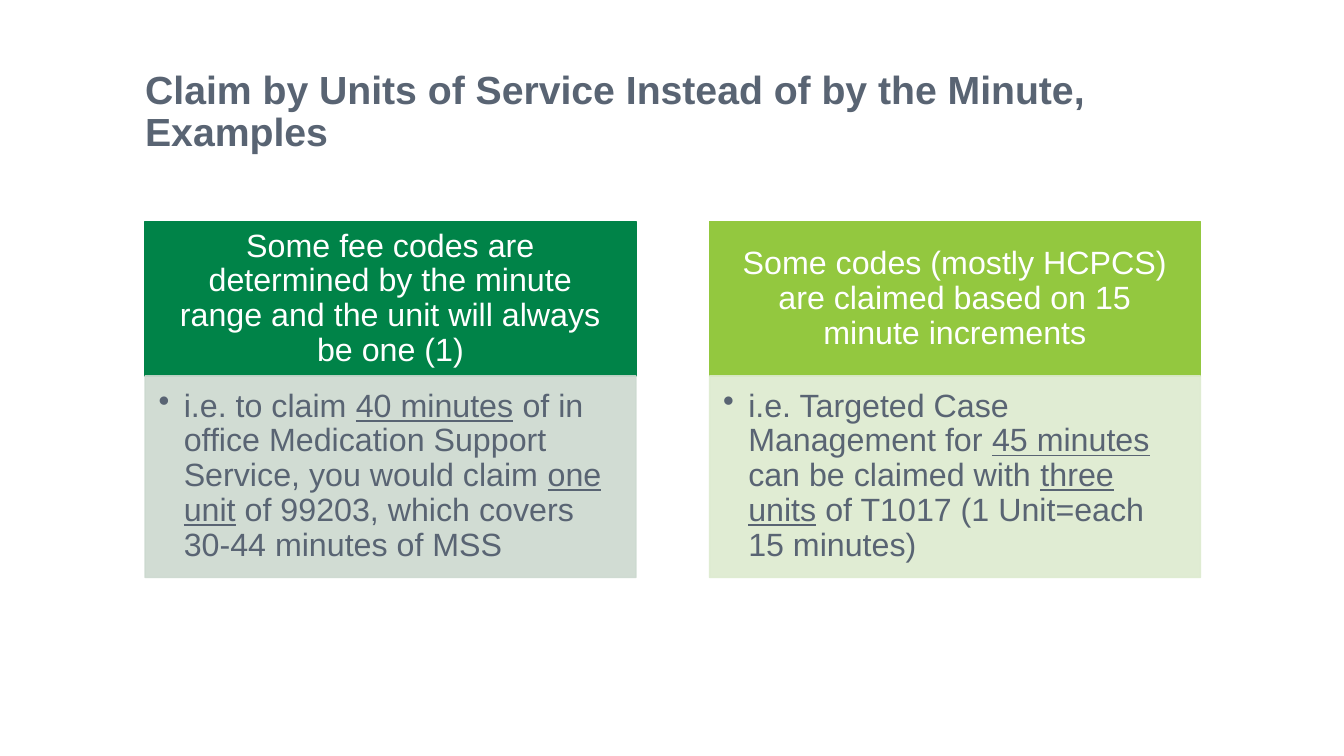
from dataclasses import dataclass

import pptx
import pptx.dml.color
import pptx.enum.shapes
import pptx.enum.text
import pptx.oxml
import pptx.oxml.ns
import pptx.slide
import pptx.text.text
import pptx.util

Pt = pptx.util.Pt
ALIGN = pptx.enum.text.PP_ALIGN
ANCHOR = pptx.enum.text.MSO_ANCHOR

SLATE = "596473"
WHITE = "FFFFFF"
LEFT_MARGIN = 103.68
COLUMN_PITCH = 403.2
COLUMN_WIDTH = 350.64
HEADER_TOP, HEADER_HEIGHT = 158.4, 110.16
BODY_TOP, BODY_HEIGHT = HEADER_TOP + HEADER_HEIGHT, 144


@dataclass(frozen=True)
class TextRun:
    text: str
    underline: bool = False


@dataclass(frozen=True)
class Column:
    header: str
    example: tuple[TextRun, ...]
    header_color: str
    body_color: str


COLUMNS = (
    Column(
        "Some fee codes are determined by the minute range and the unit will always be one (1)",
        (
            TextRun("i.e. to claim "),
            TextRun("40 minutes", True),
            TextRun(" of in office Medication Support Service, you would claim "),
            TextRun("one unit", True),
            TextRun(" of 99203, which covers 30-44 minutes of MSS"),
        ),
        "008348",
        "CCD9CF",
    ),
    Column(
        "Some codes (mostly HCPCS) are claimed based on 15 minute increments",
        (
            TextRun("i.e. Targeted Case Management for "),
            TextRun("45 minutes", True),
            TextRun(" can be claimed with "),
            TextRun("three units", True),
            TextRun(" of T1017 (1 Unit=each 15 minutes)"),
        ),
        "93C83F",
        "DDEBCF",
    ),
)


def rgb(color: str) -> pptx.dml.color.RGBColor:
    return pptx.dml.color.RGBColor.from_string(color)


def add_bullet(paragraph: pptx.text.text._Paragraph, indent: float) -> None:
    properties = paragraph._p.get_or_add_pPr()
    properties.set("marL", str(Pt(indent)))
    properties.set("indent", str(-Pt(indent)))
    bullet = pptx.oxml.ns.qn("a:buChar")
    properties.append(properties.makeelement(bullet, {"char": "•"}))


def write_text(
    text_frame: pptx.text.text.TextFrame,
    text_runs: tuple[TextRun, ...],
    *,
    size: float,
    color: str,
    insets: tuple[float, float, float, float],
    anchor: ANCHOR,
    alignment: ALIGN = ALIGN.LEFT,
    bold: bool = False,
    bullet_indent: float = 0,
) -> None:
    text_frame.word_wrap = True
    text_frame.auto_size = pptx.enum.text.MSO_AUTO_SIZE.NONE
    text_frame.vertical_anchor = anchor
    text_frame.margin_left, text_frame.margin_top, text_frame.margin_right, text_frame.margin_bottom = map(Pt, insets)
    paragraph = text_frame.paragraphs[0]
    if bullet_indent:
        add_bullet(paragraph, bullet_indent)
    paragraph.alignment = alignment
    paragraph.line_spacing = 0.9
    paragraph.space_before = Pt(0)
    for text_run in text_runs:
        run = paragraph.add_run()
        run.text = text_run.text
        run.font.name = "Arial"
        run.font.size = Pt(size)
        run.font.bold = bold
        run.font.underline = text_run.underline
        run.font.color.rgb = rgb(color)


def add_panel(
    slide: pptx.slide.Slide, left: float, top: float, height: float, color: str, opacity: int = 100
) -> pptx.text.text.TextFrame:
    shape = slide.shapes.add_shape(
        pptx.enum.shapes.MSO_SHAPE.RECTANGLE, Pt(left), Pt(top), Pt(COLUMN_WIDTH), Pt(height)
    )
    shape.shadow.inherit = False
    shape.fill.solid()
    shape.fill.fore_color.rgb = rgb(color)
    shape.line.color.rgb = rgb(color)
    shape.line.width = Pt(1)
    if opacity < 100:
        for element in shape._element.spPr.iter(pptx.oxml.ns.qn("a:srgbClr")):
            alpha = pptx.oxml.ns.qn("a:alpha")
            element.append(element.makeelement(alpha, {"val": str(opacity * 1000)}))
    return shape.text_frame


def add_column(slide: pptx.slide.Slide, column: Column, left: float) -> None:
    header = add_panel(slide, left, HEADER_TOP, HEADER_HEIGHT, column.header_color)
    write_text(
        header,
        (TextRun(column.header),),
        size=23,
        color=WHITE,
        insets=(12.9, 7.2, 12.9, 7.2),
        anchor=ANCHOR.MIDDLE,
        alignment=ALIGN.CENTER,
    )
    body = add_panel(slide, left, BODY_TOP, BODY_HEIGHT, column.body_color, opacity=90)
    write_text(
        body,
        column.example,
        size=23,
        color=SLATE,
        insets=(9.6, 9.6, 12.9, 14.4),
        anchor=ANCHOR.TOP,
        bullet_indent=18,
    )


def main() -> None:
    presentation = pptx.Presentation()
    presentation.slide_width = Pt(960)
    presentation.slide_height = Pt(540)
    slide = presentation.slides.add_slide(presentation.slide_layouts.get_by_name("Title Only"))
    title = slide.shapes.title
    title.left, title.top = Pt(LEFT_MARGIN), Pt(28.8)
    title.width, title.height = Pt(750.24), Pt(82.08)
    write_text(
        title.text_frame,
        (TextRun("Claim by Units of Service Instead of by the Minute, Examples"),),
        size=28,
        color=SLATE,
        insets=(0, 0, 0, 0),
        anchor=ANCHOR.BOTTOM,
        bold=True,
    )
    for index, column in enumerate(COLUMNS):
        add_column(slide, column, LEFT_MARGIN + index * COLUMN_PITCH)
    presentation.save("out.pptx")


if __name__ == "__main__":
    main()
